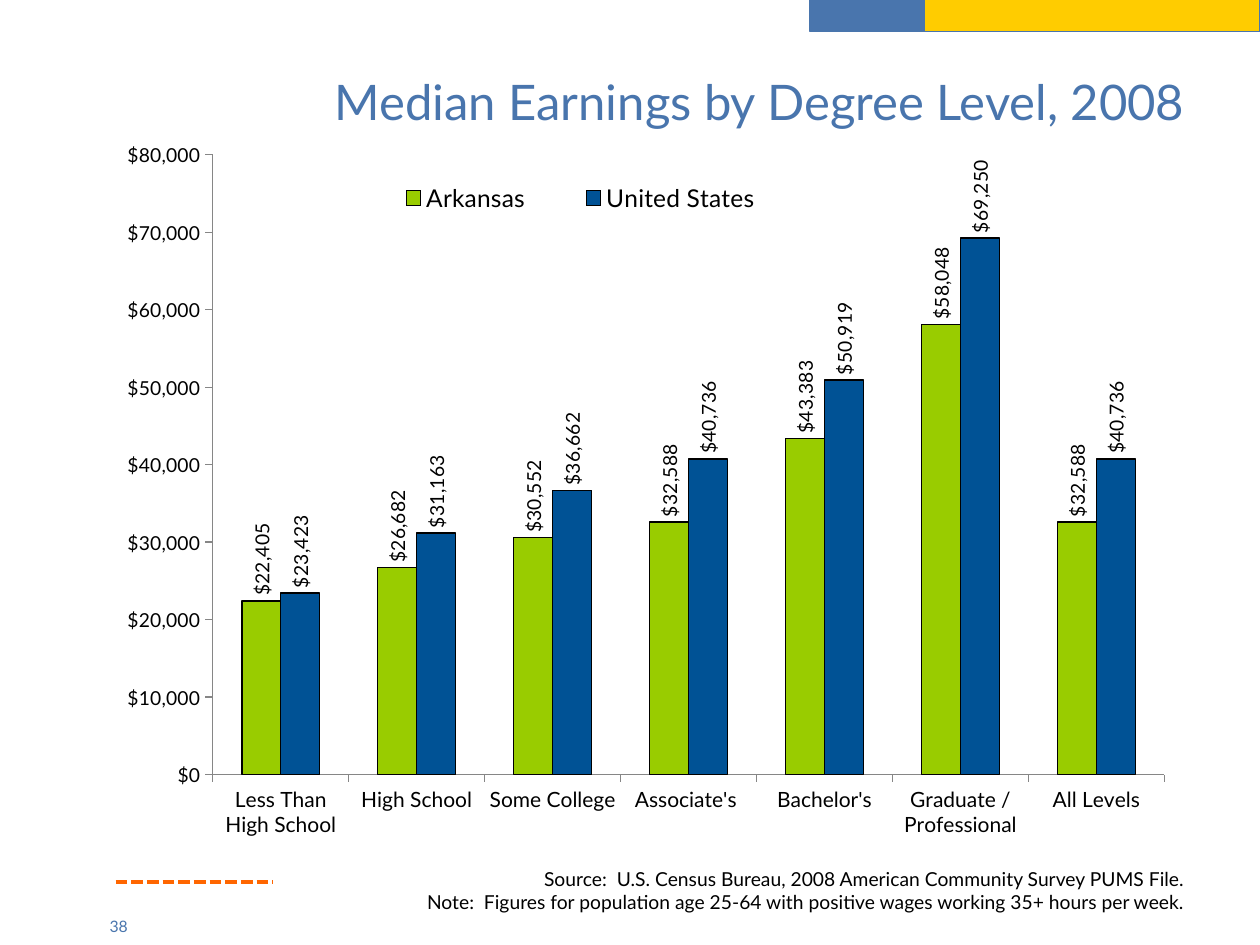
from lxml import etree
from pptx import Presentation
from pptx.chart.data import CategoryChartData
from pptx.dml.color import RGBColor
from pptx.enum.chart import XL_CHART_TYPE, XL_LABEL_POSITION, XL_LEGEND_POSITION, XL_TICK_MARK
from pptx.enum.dml import MSO_LINE
from pptx.enum.shapes import MSO_CONNECTOR, MSO_SHAPE
from pptx.enum.text import MSO_ANCHOR, MSO_AUTO_SIZE, PP_ALIGN
from pptx.oxml import parse_xml
from pptx.oxml.ns import nsdecls, qn
from pptx.util import Cm, Pt

COLUMNS = XL_CHART_TYPE.COLUMN_CLUSTERED
OUTSIDE_END = XL_LABEL_POSITION.OUTSIDE_END
LEGEND_RIGHT = XL_LEGEND_POSITION.RIGHT
TICK_OUTSIDE = XL_TICK_MARK.OUTSIDE
DOTTED = MSO_LINE.SQUARE_DOT
STRAIGHT = MSO_CONNECTOR.STRAIGHT
RECTANGLE = MSO_SHAPE.RECTANGLE
MIDDLE = MSO_ANCHOR.MIDDLE
NO_AUTOFIT = MSO_AUTO_SIZE.NONE
LEFT, RIGHT = PP_ALIGN.LEFT, PP_ALIGN.RIGHT

FONT = "Lato"
BLUE, YELLOW, ORANGE = "4975AD", "FFCC00", "FF6600"
BLACK, GREY = "000000", "868686"
DOLLARS = '"$"#,##0'

CATEGORIES = ["Less Than High School", "High School", "Some College", "Associate's ",
              "Bachelor's", "Graduate / Professional", "All Levels"]
EARNINGS = [
    ("Arkansas", "99CC00", [22405, 26682, 30552, 32588, 43383, 58048, 32588]),
    ("United States", "005295", [23423, 31163, 36662, 40736, 50919, 69250, 40736]),
]
NOTES = [
    "Source:  U.S. Census Bureau, 2008 American Community Survey PUMS File.",
    "Note:  Figures for population age 25-64 with positive wages working 35+ hours per week.",
]


def rgb(color):
    return RGBColor.from_string(color)


def style_font(font, size, color=BLACK):
    font.name, font.size, font.bold = FONT, Pt(size), False
    font.color.rgb = rgb(color)


def style_line(line, color, width=0.75):
    line.color.rgb = rgb(color)
    line.width = Pt(width)


def write(tf, lines, size, color, align):
    for i, line in enumerate(lines):
        p = tf.add_paragraph() if i else tf.paragraphs[0]
        p.alignment = align
        r = p.add_run()
        r.text = line
        style_font(r.font, size, color)


def add_bar(s, left, width, color):
    sp = s.shapes.add_shape(RECTANGLE, Cm(left), Cm(-0.02), Cm(width), Cm(0.65))
    sp.shadow.inherit = False
    sp.fill.solid()
    sp.fill.fore_color.rgb = rgb(color)
    style_line(sp.line, BLUE)


def add_dotted_line(s):
    line = s.shapes.add_connector(STRAIGHT, Cm(2.33), Cm(17.78), Cm(5.5), Cm(17.78))
    style_line(line.line, ORANGE, 2.25)
    line.line.dash_style = DOTTED
    etree.SubElement(line._element.spPr, qn("a:effectLst"))


def set_title(s, text):
    title = s.shapes.title
    title.left, title.top, title.width, title.height = Cm(1.27), Cm(0.69), Cm(22.86), Cm(2.67)
    tf = title.text_frame
    tf.vertical_anchor = MIDDLE
    tf.auto_size = NO_AUTOFIT
    write(tf, [text], 28, BLUE, RIGHT)


def add_text(s, box, lines, size, color=BLACK, align=LEFT):
    tf = s.shapes.add_textbox(*map(Cm, box)).text_frame
    tf.word_wrap = True
    write(tf, lines, size, color, align)


def manual_layout(x, y, w, h, inner=False):
    """Return a chart layout placed by fractions of the chart's size."""
    target = '<c:layoutTarget val="inner"/>' if inner else ""
    modes = '<c:xMode val="edge"/><c:yMode val="edge"/>'
    places = "".join(f'<c:{k} val="{v}"/>' for k, v in zip("xywh", (x, y, w, h)))
    return parse_xml(f'<c:layout {nsdecls("c")}><c:manualLayout>{target}{modes}{places}'
                     "</c:manualLayout></c:layout>")


def style_axis(axis, size):
    axis.has_major_gridlines = False
    axis.major_tick_mark = TICK_OUTSIDE
    style_font(axis.tick_labels.font, size)
    style_line(axis.format.line, GREY)


def style_series(series, color):
    series.format.fill.solid()
    series.format.fill.fore_color.rgb = rgb(color)
    style_line(series.format.line, BLACK)
    series.invert_if_negative = False
    labels = series.data_labels
    labels.show_value = True
    labels.number_format, labels.number_format_is_linked = DOLLARS, False
    labels.position = OUTSIDE_END
    style_font(labels.font, 11)
    body = labels._element.find(".//" + qn("a:bodyPr"))
    body.set("rot", "-5400000")
    body.set("vert", "horz")


def place_legend(chart):
    chart.has_legend = True
    legend = chart.legend
    legend.position = LEGEND_RIGHT
    legend.include_in_layout = False
    style_font(legend.font, 14)
    element = legend._element
    for old in element.findall(qn("c:layout")):
        element.remove(old)
    element.find(qn("c:legendPos")).addnext(manual_layout(0.23, 0.07, 0.42, 0.06))


def place_plot(chart):
    area = chart._chartSpace.find(".//" + qn("c:plotArea"))
    for old in area.findall(qn("c:layout")):
        area.remove(old)
    area.insert(0, manual_layout(0.1, 0.04, 0.88, 0.86, inner=True))


def add_earnings_chart(s):
    data = CategoryChartData(number_format=DOLLARS)
    data.categories = CATEGORIES
    for name, _, values in EARNINGS:
        data.add_series(name, values)
    chart = s.shapes.add_chart(COLUMNS, Cm(2.11), Cm(2.54), Cm(21.8), Cm(14.53), data).chart
    chart.has_title = False
    style_font(chart.font, 18)

    plot = chart.plots[0]
    plot.vary_by_categories = False
    plot.gap_width, plot.overlap = 150, 0
    for series, (_, color, _) in zip(plot.series, EARNINGS):
        style_series(series, color)

    style_axis(chart.category_axis, 12)
    axis = chart.value_axis
    style_axis(axis, 11)
    axis.minimum_scale, axis.maximum_scale, axis.major_unit = 0, 80000, 10000
    axis.tick_labels.number_format = DOLLARS
    axis.tick_labels.number_format_is_linked = False
    place_legend(chart)
    place_plot(chart)


def main():
    prs = Presentation()
    prs.slide_width, prs.slide_height = Cm(25.4), Cm(19.05)
    s = prs.slides.add_slide(prs.slide_layouts[5])
    add_dotted_line(s)
    add_bar(s, 16.33, 2.31, BLUE)
    add_bar(s, 18.63, 6.77, YELLOW)
    set_title(s, "Median Earnings by Degree Level, 2008")
    add_earnings_chart(s)
    add_text(s, (7.42, 17.35, 16.71, 1.19), NOTES, 11, align=RIGHT)
    add_text(s, (1.96, 18.36, 2.54, 0.69), ["38"], 9, BLUE)
    prs.save("out.pptx")


if __name__ == "__main__":
    main()
